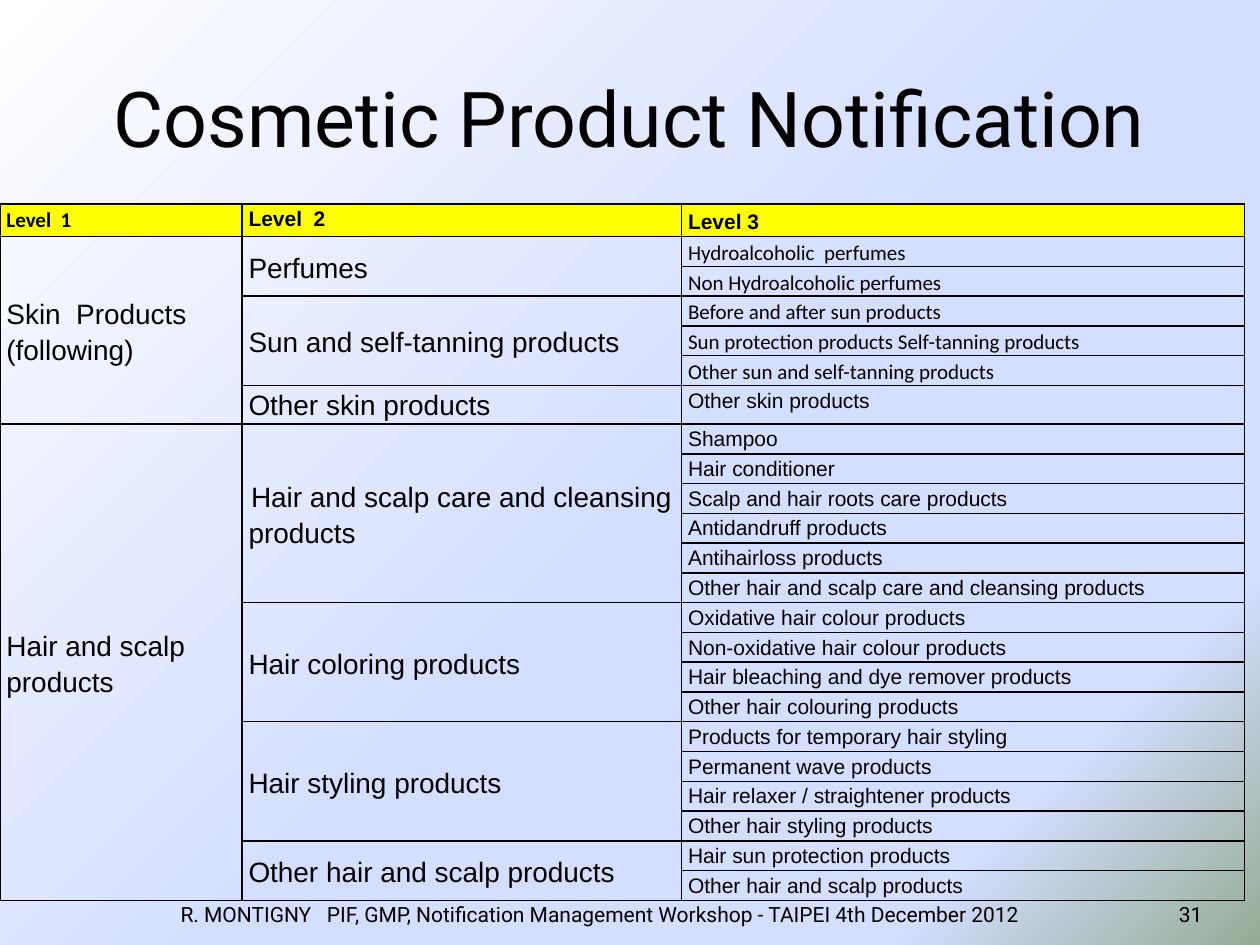
"""Build the cosmetic product notification slide with its three-level table."""
from pptx import Presentation
from pptx.dml.color import RGBColor
from pptx.enum.text import MSO_ANCHOR, PP_ALIGN
from pptx.oxml import parse_xml
from pptx.oxml.ns import nsdecls, qn
from pptx.util import Cm, Pt


def color(code):
    return RGBColor.from_string(code)


def write(frame, text, size, font, align=PP_ALIGN.LEFT, bold=False):
    para = frame.paragraphs[0]
    para.alignment = align
    run = para.add_run()
    run.text = text
    run.font.size = Pt(size)
    run.font.name = font
    run.font.bold = bold
    run.font.color.rgb = color("000000")
    return para


deck = Presentation()
deck.slide_width, deck.slide_height = Cm(25.4), Cm(19.05)
slide = deck.slides.add_slide(deck.slide_layouts[5])

fill = slide.background.fill
fill.gradient()
fill.gradient_angle = 315
stops = slide._element.find(".//" + qn("a:gsLst"))
for stop in list(stops):
    stops.remove(stop)
for pos, code in [(0, "FFFFFF"), (53, "D4DEFF"), (83, "D4DEFF"), (100, "96AB94")]:
    stops.append(parse_xml(
        f'<a:gs {nsdecls("a")} pos="{pos * 1000}"><a:srgbClr val="{code}"/></a:gs>'))

title = slide.shapes.title
title.left, title.top, title.width, title.height = Cm(1.27), Cm(0.76), Cm(22.86), Cm(3.18)
title.text_frame.vertical_anchor = MSO_ANCHOR.MIDDLE
write(title.text_frame, "Cosmetic Product Notification", 44, "Roboto", PP_ALIGN.CENTER)

footer = "R. MONTIGNY   PIF, GMP, Notification Management Workshop - TAIPEI 4th December 2012"
for left, width, text, align in [(1.5, 21.2, footer, PP_ALIGN.CENTER),
                                 (23.09, 1.4, "31", PP_ALIGN.RIGHT)]:
    box = slide.shapes.add_textbox(Cm(left), Cm(17.91), Cm(width), Cm(1.02))
    box.text_frame.word_wrap = True
    box.text_frame.vertical_anchor = MSO_ANCHOR.MIDDLE
    write(box.text_frame, text, 12, "Roboto", align)

heads = [("Level  1", "Calibri"), ("Level  2", "Arial"), ("Level 3", "Arial")]
groups = [
    ("Skin  Products (following)", [
        ("Perfumes", "Calibri", ["Hydroalcoholic  perfumes", "Non Hydroalcoholic perfumes"]),
        ("Sun and self-tanning products", "Calibri", [
            "Before and after sun products",
            "Sun protection products Self-tanning products",
            "Other sun and self-tanning products"]),
        ("Other skin products", "Arial", ["Other skin products"]),
    ]),
    ("Hair and scalp products", [
        ("Hair and scalp care and cleansing products", "Arial", [
            "Shampoo", "Hair conditioner", "Scalp and hair roots care products",
            "Antidandruff products", "Antihairloss products",
            "Other hair and scalp care and cleansing products"]),
        ("Hair coloring products", "Arial", [
            "Oxidative hair colour products", "Non-oxidative hair colour products",
            "Hair bleaching and dye remover products", "Other hair colouring products"]),
        ("Hair styling products", "Arial", [
            "Products for temporary hair styling", "Permanent wave products",
            "Hair relaxer / straightener products", "Other hair styling products"]),
        ("Other hair and scalp products", "Arial", [
            "Hair sun protection products", "Other hair and scalp products"]),
    ]),
]

count = 1 + sum(len(items) for _, parts in groups for _, _, items in parts)
table = slide.shapes.add_table(count, 3, Cm(0), Cm(4.11), Cm(25.09), Cm(13.94)).table
for col, width in zip(table.columns, [4.88, 8.86, 11.35]):
    col.width = Cm(width)
for row in table.rows:
    row.height = Cm(0.6)
table.rows[0].height = Cm(0.66)

for cell in table.iter_cells():
    cell.margin_left = cell.margin_right = Cm(0.13)
    cell.margin_top = cell.margin_bottom = Cm(0)
    cell.text_frame.paragraphs[0].line_spacing = 1.15
    props = cell._tc.get_or_add_tcPr()
    for side in ["lnL", "lnR", "lnT", "lnB"]:
        props.append(parse_xml(
            f'<a:{side} {nsdecls("a")} w="12700"><a:solidFill>'
            f'<a:srgbClr val="000000"/></a:solidFill></a:{side}>'))
    cell.fill.background()

for cell, (text, font) in zip(table.rows[0].cells, heads):
    cell.fill.solid()
    cell.fill.fore_color.rgb = color("FFFF00")
    write(cell.text_frame, text, 12, font, bold=True)
table.cell(0, 2).vertical_anchor = MSO_ANCHOR.MIDDLE

spans = []
line = 1
for group, parts in groups:
    start = line
    for part, font, items in parts:
        spans.append((line, 1, len(items), part))
        for item in items:
            write(table.cell(line, 2).text_frame, item, 12, font)
            line += 1
    spans.append((start, 0, line - start, group))

for first, col, size, text in spans:
    cell = table.cell(first, col)
    para = write(cell.text_frame, text, 16, "Arial")
    if size > 1:
        cell.merge(table.cell(first + size - 1, col))
        cell.vertical_anchor = MSO_ANCHOR.MIDDLE
    if text.startswith("Hair and scalp care"):
        para._p.get_or_add_pPr().set("indent", str(Cm(0.05)))

deck.save("out.pptx")
